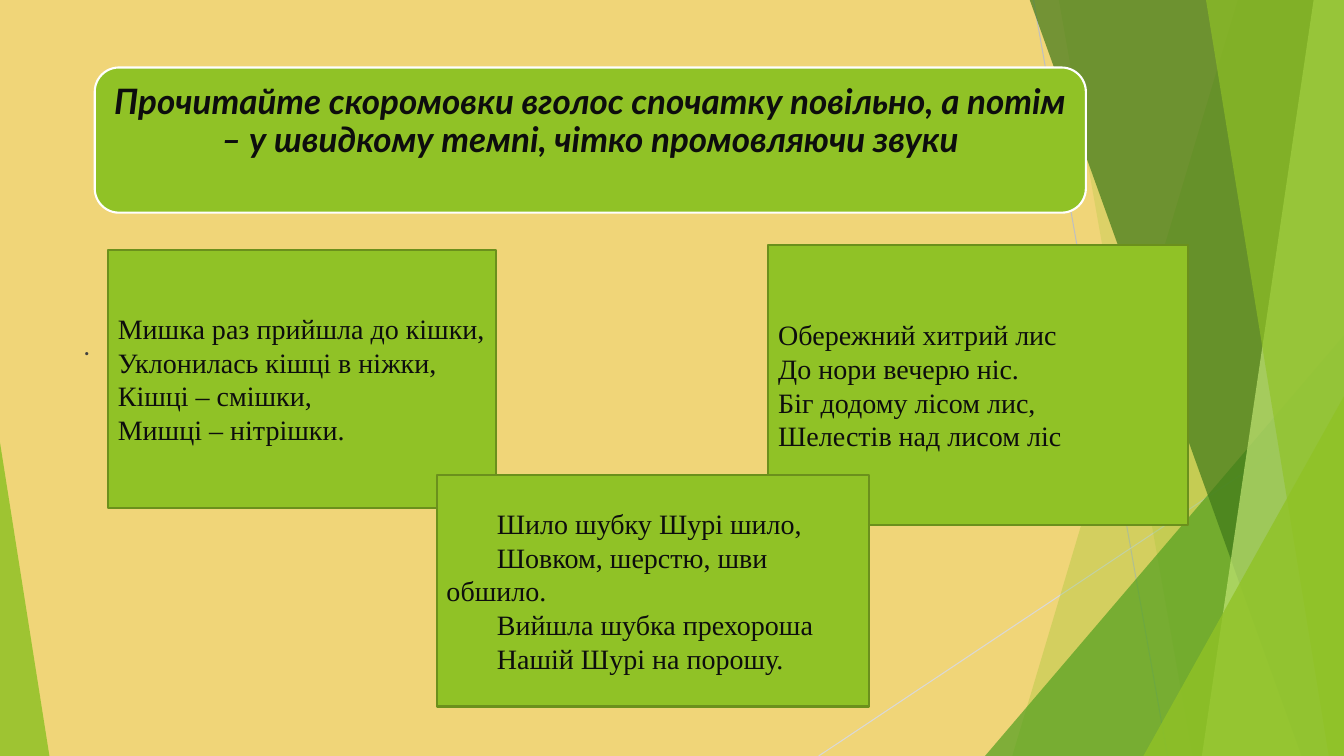
"""Build a slide with three Ukrainian tongue twisters over green facets."""
from dataclasses import dataclass

from lxml.etree import SubElement
from pptx import Presentation
from pptx.dml.color import RGBColor
from pptx.enum.shapes import MSO_CONNECTOR, MSO_SHAPE
from pptx.enum.text import MSO_ANCHOR, PP_ALIGN
from pptx.oxml.ns import qn
from pptx.util import Inches, Pt

WIDTH, HEIGHT, TOP = 13.33, 7.5, -0.01
GREEN, INK = "90C226", "0D0D0D"
VERSE_FONT = {"name": "Times New Roman", "size": Pt(20)}
HEADING_FONT = {"name": "Lato", "size": Pt(25), "bold": True, "italic": True}
DOT_FONT = {"name": "Lato", "size": Pt(18), "italic": True}


@dataclass
class Ray:
    start: tuple[float, float]
    end: tuple[float, float]
    color: str


@dataclass
class Band:
    top_x: float
    bottom_x: float
    color: str
    opacity: int


@dataclass
class Wedge:
    left: float
    top: float
    width: float
    apex: float
    color: str
    opacity: int


@dataclass
class Verse:
    frame: tuple[float, float, float, float]
    lines: list[str]
    indent: float = 0


RAYS = [
    Ray((10.25, 0), (11.58, HEIGHT), "BFBFBF"),
    Ray((WIDTH, 4.03), (8.12, HEIGHT), "D9D9D9"),
]
FACETS = [
    Band(12.28, 10.04, GREEN, 30),
    Band(10.5, 11.83, GREEN, 20),
    Wedge(9.77, 3.33, 3.56, 1, "54A021", 72),
    Band(10.21, 12.91, "3F7819", 70),
    Band(13.03, 11.92, "C0E474", 70),
    Band(11.96, 13.18, GREEN, 65),
    Wedge(11.34, 3.93, 1.99, 1, GREEN, 80),
    Wedge(0, 4.39, 0.49, 0, GREEN, 85),
]
HEADING = ("Прочитайте скоромовки вголос спочатку повільно, а потім "
           "– у швидкому темпі, чітко промовляючи звуки")
VERSES = [
    Verse((7.62, 2.43, 4.16, 2.78),
          ["Обережний хитрий лис", "До нори вечерю ніс.",
           "Біг додому лісом лис,", "Шелестів над лисом ліс"]),
    Verse((1.07, 2.48, 3.85, 2.56),
          ["Мишка раз прийшла до кішки,", "Уклонилась кішці в ніжки,",
           "Кішці – смішки,", "Мишці – нітрішки."]),
    Verse((4.33, 4.71, 4.29, 2.3),
          ["Шило шубку Шурі шило,", "Шовком, шерстю, шви обшило.",
           "Вийшла шубка прехороша", "Нашій Шурі на порошу."], 0.5),
]


def rgb(color: str) -> RGBColor:
    """Turn a hex string into a colour."""
    return RGBColor.from_string(color)


def paint(shape, fill: str, line: str | None = None) -> None:
    """Give a shape its fill and outline."""
    shape.shadow.inherit = False
    shape.fill.solid()
    shape.fill.fore_color.rgb = rgb(fill)
    if line is None:
        shape.line.fill.background()
    else:
        shape.line.color.rgb = rgb(line)
        shape.line.width = Pt(1.5)


def draw_ray(page, ray: Ray) -> None:
    """Draw a thin straight line."""
    points = [Inches(value) for value in (*ray.start, *ray.end)]
    connector = page.shapes.add_connector(MSO_CONNECTOR.STRAIGHT, *points)
    connector.line.color.rgb = rgb(ray.color)
    connector.line.width = Pt(0.75)
    SubElement(connector._element.spPr, qn("a:effectLst"))


def draw_facet(page, facet: Band | Wedge) -> None:
    """Draw a translucent band or triangle."""
    if isinstance(facet, Band):
        corners = [(WIDTH, TOP), (WIDTH, HEIGHT), (facet.bottom_x, HEIGHT)]
        builder = page.shapes.build_freeform(Inches(facet.top_x), Inches(TOP))
        builder.add_line_segments([(Inches(x), Inches(y)) for x, y in corners])
        shape = builder.convert_to_shape()
    else:
        frame = (facet.left, facet.top, facet.width, HEIGHT - facet.top)
        shape = page.shapes.add_shape(MSO_SHAPE.ISOSCELES_TRIANGLE, *map(Inches, frame))
        shape.adjustments[0] = facet.apex
    paint(shape, facet.color)
    color = shape.fill._xPr.find(qn("a:solidFill"))[0]
    SubElement(color, qn("a:alpha"), val=str(facet.opacity * 1000))


def write(para, text: str, formats: dict, color: str) -> None:
    """Add one formatted span to a paragraph."""
    span = para.add_run()
    span.text = text
    span.font.color.rgb = rgb(color)
    for name, value in formats.items():
        setattr(span.font, name, value)


def draw_heading(page) -> None:
    """Draw the rounded heading panel and its text."""
    frame = map(Inches, (0.94, 0.67, 9.83, 1.44))
    panel = page.shapes.add_shape(MSO_SHAPE.ROUNDED_RECTANGLE, *frame)
    paint(panel, GREEN, "FFFFFF")
    box = page.shapes.add_textbox(*map(Inches, (1.01, 0.74, 9.68, 1.3)))
    margins = ("margin_left", "margin_top", "margin_right", "margin_bottom")
    for name in margins:
        setattr(box.text_frame, name, Inches(0.1))
    box.text_frame.word_wrap = True
    para = box.text_frame.paragraphs[0]
    para.alignment = PP_ALIGN.CENTER
    para.line_spacing = 0.9
    write(para, HEADING, HEADING_FONT, INK)


def draw_dot(page) -> None:
    """Draw the body text, a single dot."""
    box = page.shapes.add_textbox(*map(Inches, (0.74, 2.36, 9.4, 4.24)))
    box.text_frame.word_wrap = True
    box.text_frame.margin_top = Inches(0.92)
    write(box.text_frame.paragraphs[0], ".", DOT_FONT, "404040")


def draw_verse(page, verse: Verse) -> None:
    """Draw one tongue twister card."""
    card = page.shapes.add_shape(MSO_SHAPE.RECTANGLE, *map(Inches, verse.frame))
    paint(card, GREEN, "6B901C")
    frame = card.text_frame
    frame.word_wrap = True
    frame.vertical_anchor = MSO_ANCHOR.MIDDLE
    for index, line in enumerate(verse.lines):
        para = frame.add_paragraph() if index else frame.paragraphs[0]
        para.alignment = PP_ALIGN.LEFT
        para._p.get_or_add_pPr().set("indent", str(Inches(verse.indent)))
        write(para, line, VERSE_FONT, INK)


def main() -> None:
    """Build and save the deck."""
    deck = Presentation()
    deck.slide_width, deck.slide_height = Inches(WIDTH), Inches(HEIGHT)
    page = deck.slides.add_slide(deck.slide_layouts[6])
    page.background.fill.solid()
    page.background.fill.fore_color.rgb = rgb("F0D578")
    for ray in RAYS:
        draw_ray(page, ray)
    for facet in FACETS:
        draw_facet(page, facet)
    draw_heading(page)
    draw_dot(page)
    for verse in VERSES:
        draw_verse(page, verse)
    deck.save("out.pptx")


if __name__ == "__main__":
    main()
